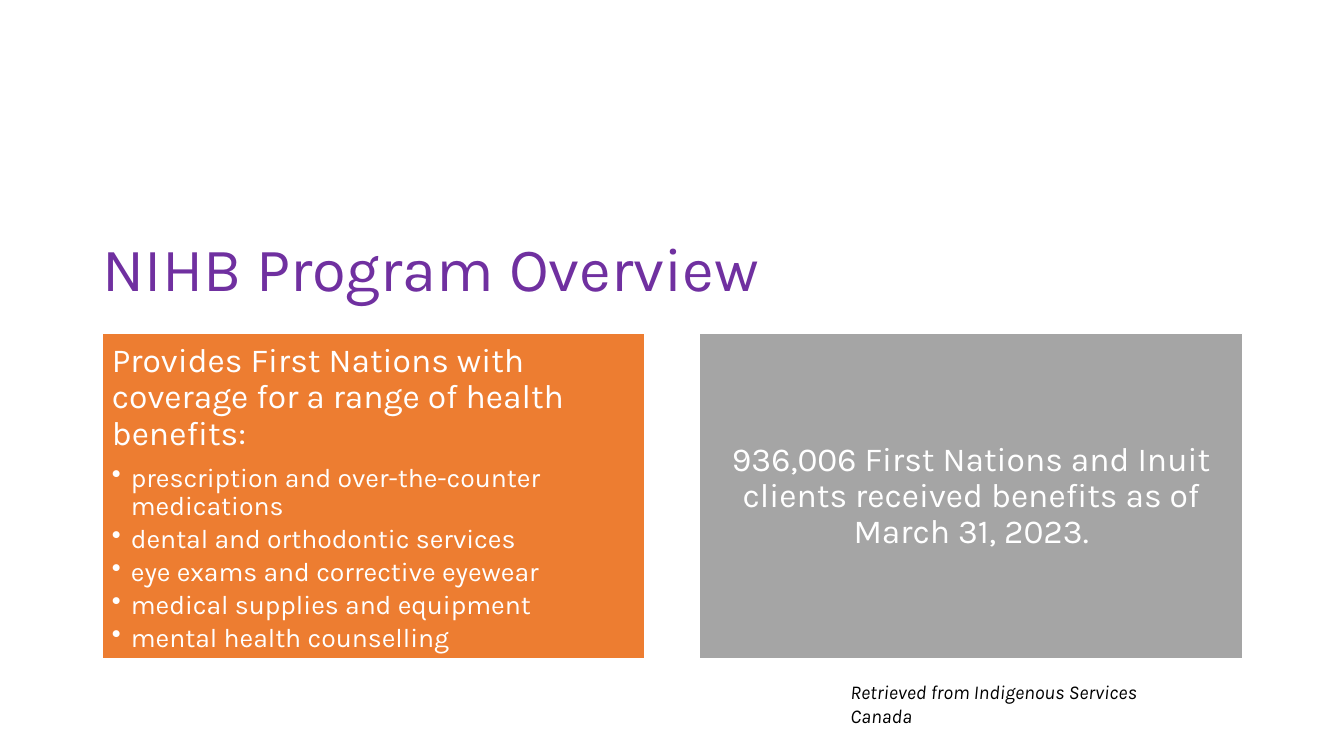
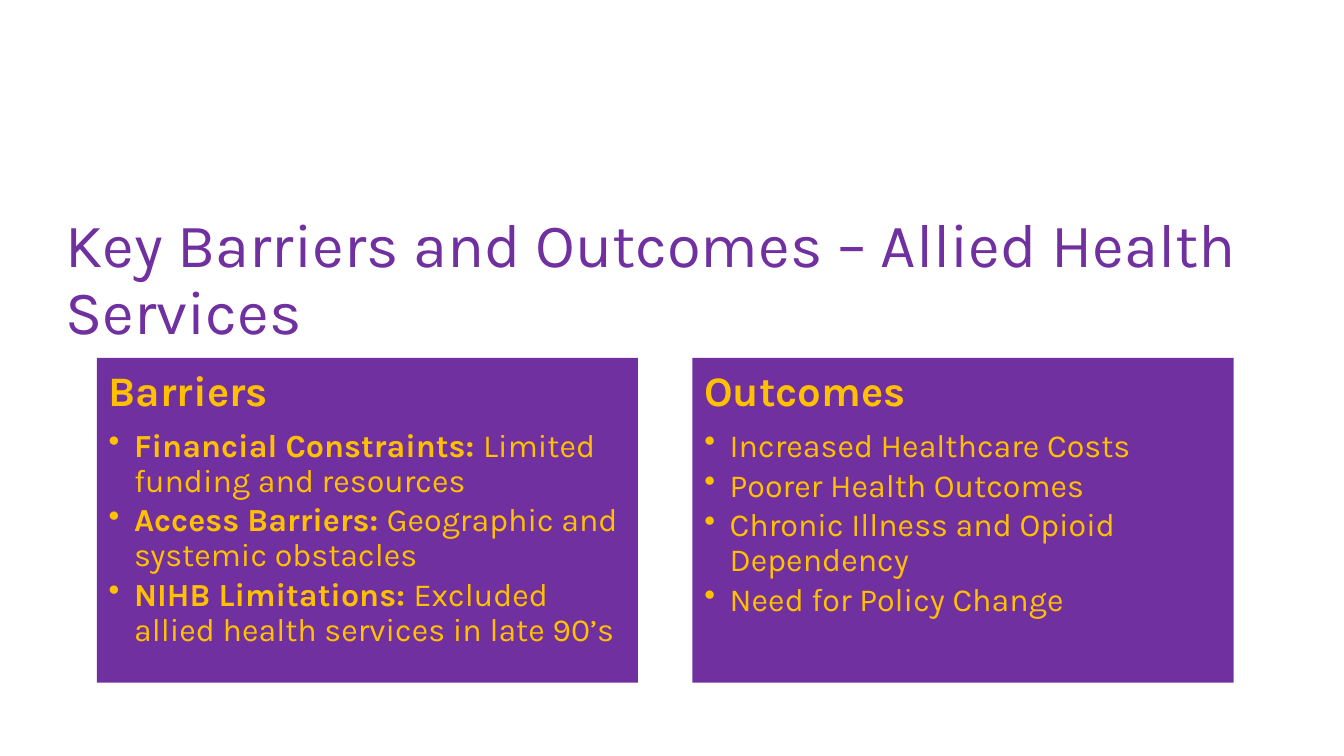
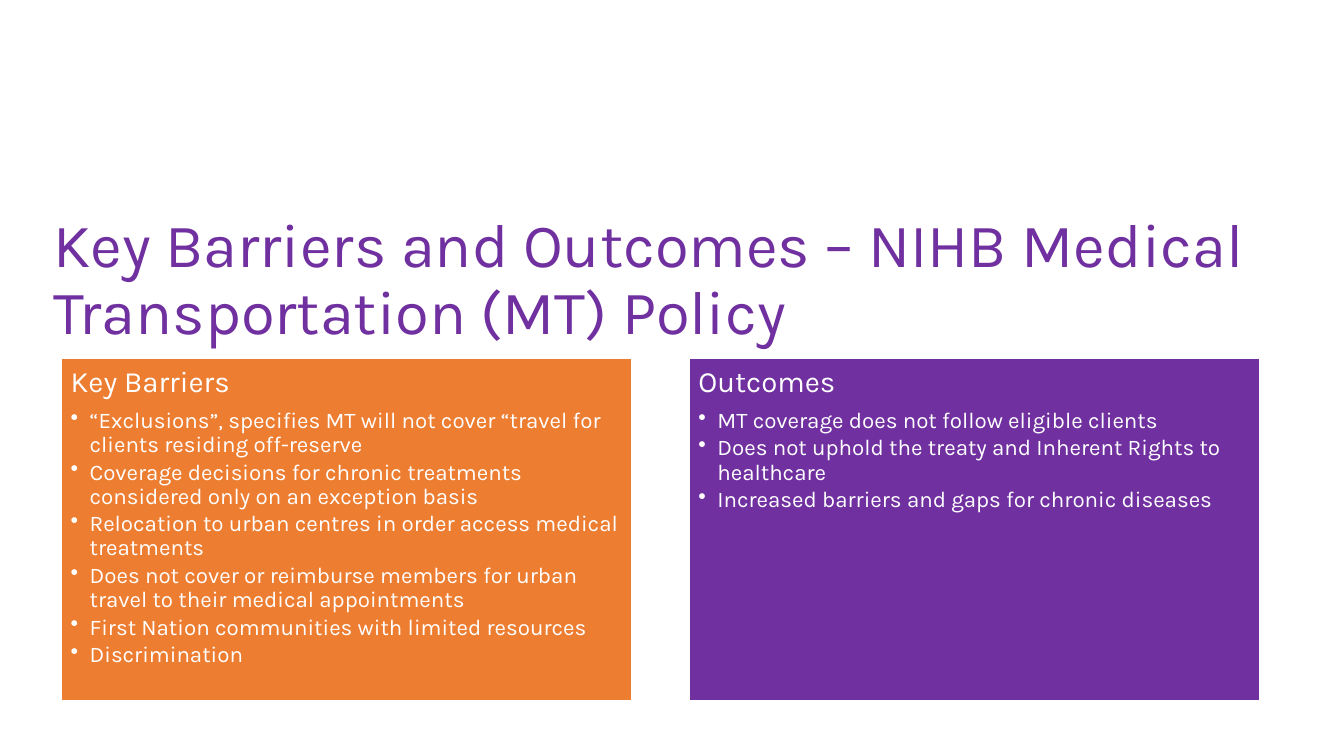
from dataclasses import dataclass

from lxml import etree
from pptx import Presentation
from pptx import util as u
from pptx.dml.color import RGBColor
from pptx.enum import shapes, text
from pptx.oxml import ns

COLORS = {
    "purple": "7030A0",
    "orange": "ED7D31",
    "grey": "A5A5A5",
    "gold": "FFC000",
    "white": "FFFFFF",
    "black": "000000",
}
FONT = "Karla"


@dataclass
class PanelStyle:
    """Geometry and text sizes shared by the two panels of a page (cm, pt)."""
    left: float
    top: float
    width: float
    height: float
    gap: float
    inset: float
    indent: float
    heading_size: int
    bullet_size: int
    ink: str = "white"
    bold_heading: bool = False
    outlined: bool = True


@dataclass
class Panel:
    fill: str
    heading: str
    bullets: tuple[tuple[str, str], ...] = ()  # (bold lead, plain text)
    centered: bool = False


@dataclass
class Page:
    title: str
    title_at: tuple[float, float, float, float]
    style: PanelStyle
    panels: tuple[Panel, Panel]
    source: str = ""


def plain(*lines: str) -> tuple[tuple[str, str], ...]:
    return tuple(("", line) for line in lines)


PAGES = (
    Page(
        "NIHB Program Overview",
        (2.34, 5.87, 29.21, 2.21),
        PanelStyle(2.57, 8.41, 13.69, 8.2, 1.37, 0.25, 0.48, 24, 19),
        (
            Panel("orange", "Provides First Nations with coverage for a range of health benefits:", plain(
                "prescription and over-the-counter medications",
                "dental and orthodontic services",
                "eye exams and corrective eyewear",
                "medical supplies and equipment",
                "mental health counselling",
            )),
            Panel("grey", "936,006 First Nations and Inuit clients received benefits as of March 31, 2023.",
                  centered=True),
        ),
        source="Retrieved from Indigenous Services Canada",
    ),
    Page(
        "Key Barriers and Outcomes – Allied Health Services",
        (1.4, 5.28, 31.19, 1.6),
        PanelStyle(2.44, 9.02, 13.64, 8.18, 1.37, 0.3, 0.64, 30, 23,
                   ink="gold", bold_heading=True, outlined=False),
        (
            Panel("purple", "Barriers", (
                ("Financial Constraints: ", "Limited funding and resources"),
                ("Access Barriers: ", "Geographic and systemic obstacles"),
                ("NIHB Limitations: ", "Excluded allied health services in late 90’s"),
            )),
            Panel("purple", "Outcomes", plain(
                "Increased Healthcare Costs",
                "Poorer Health Outcomes",
                "Chronic Illness and Opioid Dependency",
                "Need for Policy Change",
            )),
        ),
    ),
    Page(
        "Key Barriers and Outcomes – NIHB Medical Transportation (MT) Policy",
        (1.09, 5.28, 31.9, 1.6),
        PanelStyle(1.55, 9.02, 14.38, 8.64, 1.44, 0.23, 0.48, 21, 16),
        (
            Panel("orange", "Key Barriers", plain(
                "“Exclusions”, specifies MT will not cover “travel for clients residing off-reserve",
                "Coverage decisions for chronic treatments considered only on an exception basis",
                "Relocation to urban centres in order access medical treatments",
                "Does not cover or reimburse members for urban travel to their medical appointments",
                "First Nation communities with limited resources",
                "Discrimination",
            )),
            Panel("purple", "Outcomes", plain(
                "MT coverage does not follow eligible clients",
                "Does not uphold the treaty and Inherent Rights to healthcare",
                "Increased barriers and gaps for chronic diseases",
            )),
        ),
    ),
)


def rgb(name: str) -> RGBColor:
    return RGBColor.from_string(COLORS[name])


# Text
def write_para(frame, words: str, *, size: float, color: str, lead: str = "",
               bold: bool = False, italic: bool = False, centered: bool = False,
               spacing: float = 0.9, after: float = 0, indent: float = 0) -> None:
    """Add a paragraph; lead is a bold opening, after a share of the size."""
    para = frame.paragraphs[0]
    if para.runs:
        para = frame.add_paragraph()
    if indent:
        props = para._p.get_or_add_pPr()
        props.set("marL", str(u.Cm(indent)))
        props.set("indent", str(-u.Cm(indent)))
        etree.SubElement(props, ns.qn("a:buChar")).set("char", "•")
    para.alignment = text.PP_ALIGN.CENTER if centered else text.PP_ALIGN.LEFT
    para.line_spacing = spacing
    para.space_after = u.Pt(round(size * after, 1))
    for part, heavy in ((lead, True), (words, bold)):
        if part:
            span = para.add_run()
            span.text = part
            span.font.name = FONT
            span.font.size = u.Pt(size)
            span.font.bold = heavy
            span.font.italic = italic
            span.font.color.rgb = rgb(color)


def add_text_box(page, at: tuple[float, float, float, float], words: str, **style) -> None:
    box = page.shapes.add_textbox(*map(u.Cm, at))
    box.text_frame.word_wrap = True
    write_para(box.text_frame, words, **style)


# Panels
def add_panel(page, panel: Panel, style: PanelStyle, left: float) -> None:
    box = page.shapes.add_shape(
        shapes.MSO_SHAPE.RECTANGLE,
        *map(u.Cm, (left, style.top, style.width, style.height)))
    box.shadow.inherit = False
    box.fill.solid()
    box.fill.fore_color.rgb = rgb(panel.fill)
    if style.outlined:
        box.line.color.rgb = rgb("white")
        box.line.width = u.Pt(1)
    else:
        box.line.fill.background()

    frame = box.text_frame
    frame.word_wrap = True
    frame.margin_left = frame.margin_right = u.Cm(style.inset)
    frame.margin_top = frame.margin_bottom = u.Cm(style.inset)
    frame.vertical_anchor = text.MSO_ANCHOR.MIDDLE if panel.centered else text.MSO_ANCHOR.TOP
    write_para(frame, panel.heading, size=style.heading_size, color=style.ink,
               bold=style.bold_heading, centered=panel.centered, after=0.35)
    for lead, words in panel.bullets:
        write_para(frame, words, lead=lead, size=style.bullet_size, color=style.ink,
                   after=0.15, indent=style.indent)


def add_page(deck, content: Page) -> None:
    page = deck.slides.add_slide(deck.slide_layouts[6])
    add_text_box(page, content.title_at, content.title, size=44, color="purple")
    style = content.style
    for column, panel in enumerate(content.panels):
        add_panel(page, panel, style, style.left + column * (style.width + style.gap))
    if content.source:
        add_text_box(page, (21.18, 17.02, 9.22, 0.86), content.source,
                     size=14, color="black", italic=True, spacing=1.0)


def main() -> None:
    deck = Presentation()
    deck.slide_width, deck.slide_height = u.Cm(33.87), u.Cm(19.05)
    for content in PAGES:
        add_page(deck, content)
    deck.save("out.pptx")


if __name__ == "__main__":
    main()
